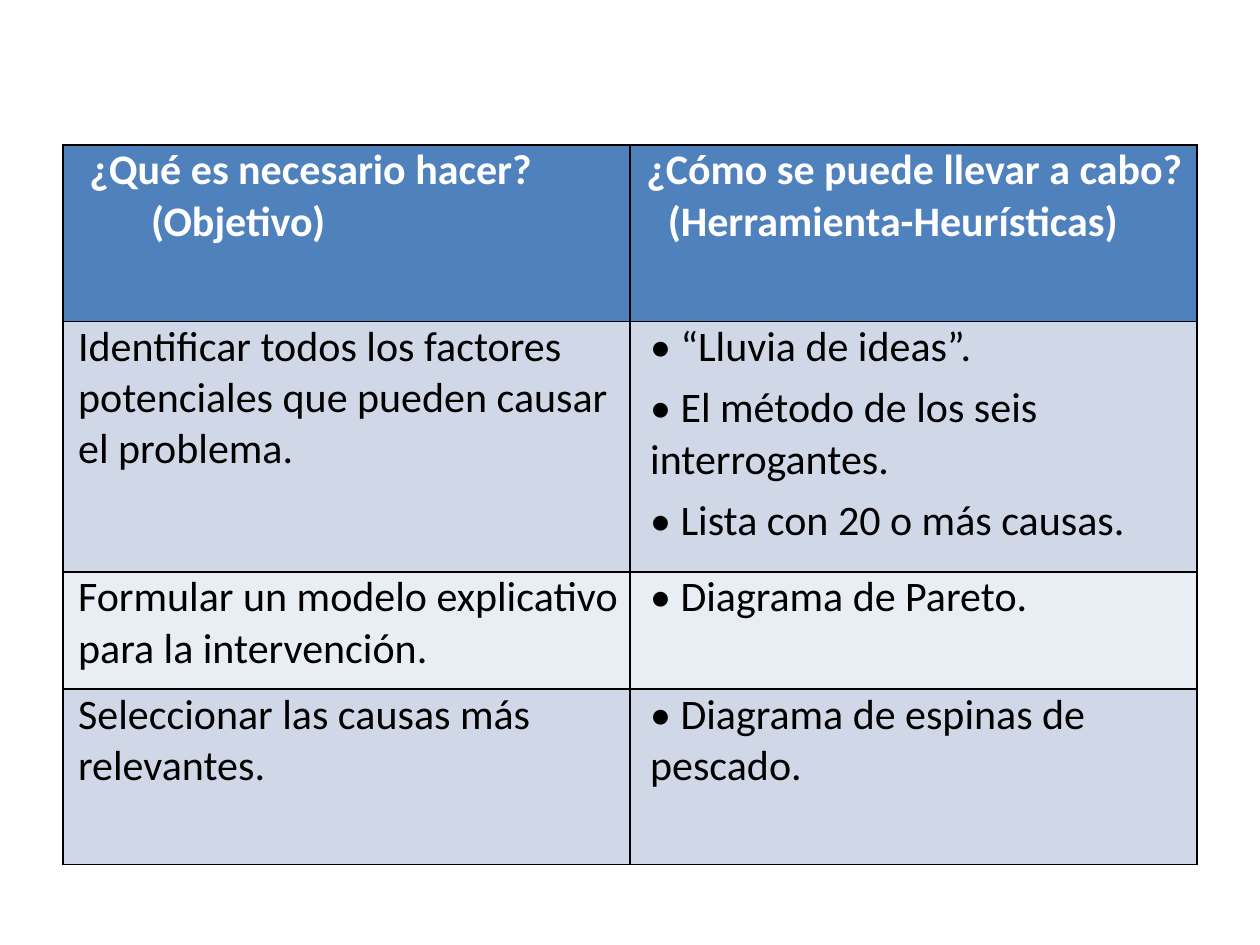
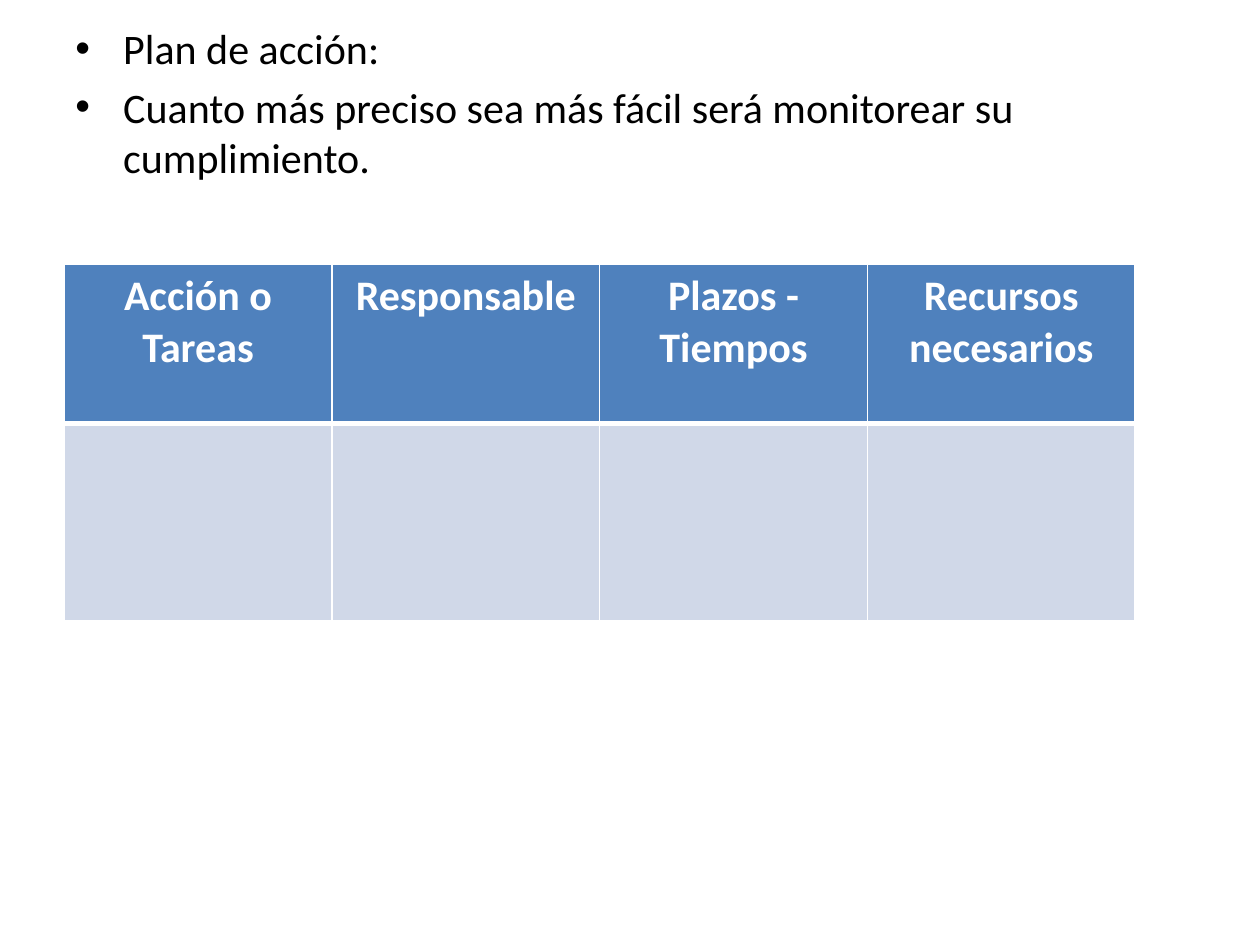
from lxml import etree
from pptx import Presentation
from pptx import oxml
from pptx.dml import color
from pptx.enum import text
from pptx.oxml import ns
from pptx.util import Inches, Pt

FONT = "Calibri"
SIZE = 24
HEAD, DARK, PALE = "4F81BD", "D0D8E8", "E9EDF4"
BLACK, WHITE = "000000", "FFFFFF"


def paint(hue):
    """Turn a hex string into a colour."""
    return color.RGBColor.from_string(hue)


def write(par, words, hue=BLACK, bold=False):
    """Add one run in the shared font."""
    run = par.add_run()
    run.text = words
    font = run.font
    font.name, font.size, font.bold = FONT, Pt(SIZE), bold
    font.color.rgb = paint(hue)


def indent(par, left, first=0):
    """Set the left margin and first-line indent of a paragraph."""
    props = par._p.get_or_add_pPr()
    props.set("marL", str(Inches(left)))
    props.set("indent", str(Inches(first)))
    return props


def border(cell, hue, **widths):
    """Draw the four cell edges, one point wide unless told otherwise."""
    props = cell._tc.get_or_add_tcPr()
    for side in "LRTB":
        line = etree.SubElement(props, ns.qn(f"a:ln{side}"),
                                w=str(Pt(widths.get(side, 1))))
        fill = etree.SubElement(line, ns.qn("a:solidFill"))
        etree.SubElement(fill, ns.qn("a:srgbClr"), val=hue)


def shade(cell, hue):
    """Fill a cell with a plain colour."""
    cell.fill.solid()
    cell.fill.fore_color.rgb = paint(hue)


def grid(slide, left, top, widths, heights):
    """Add an unbanded table with the given columns and rows."""
    table = slide.shapes.add_table(
        len(heights), len(widths), Inches(left), Inches(top),
        Inches(sum(widths)), Inches(sum(heights))).table
    table.first_row = table.horz_banding = False
    for col, width in zip(table.columns, widths):
        col.width = Inches(width)
    for row, height in zip(table.rows, heights):
        row.height = Inches(height)
    return table


def fill_goal(cell, lines, hue, left, first=0, before=3, bold=False):
    """Write the paragraphs of one goal cell, without cell margins."""
    cell.margin_left = cell.margin_right = 0
    cell.margin_top = cell.margin_bottom = 0
    frame = cell.text_frame
    for num, line in enumerate(lines):
        par = frame.add_paragraph() if num else frame.paragraphs[0]
        indent(par, left, first)
        par.space_before, par.space_after = Pt(before), Pt(3)
        write(par, line, hue, bold)


def add_goals(slide, left, top):
    """Place the table of goals and tools."""
    heads = [("¿Qué es necesario hacer? (Objetivo)", 0.7, -0.49),
             ("¿Cómo se puede llevar a cabo? (Herramienta-Heurísticas)",
              0.3, -0.17)]
    goals = [
        ("Identificar todos los factores potenciales que pueden "
         "causar el problema.",
         ["“Lluvia de ideas”.", "El método de los seis interrogantes.",
          "Lista con 20 o más causas."]),
        ("Formular un modelo explicativo para la intervención.",
         ["Diagrama de Pareto."]),
        ("Seleccionar las causas más relevantes.",
         ["Diagrama de espinas de pescado."]),
    ]
    table = grid(slide, left, top, [4.5] * 2, [1.4, 1.99, 0.93, 1.39])
    for cell in table.iter_cells():
        border(cell, BLACK)
    for col, (head, margin, first) in enumerate(heads):
        cell = table.cell(0, col)
        shade(cell, HEAD)
        fill_goal(cell, [head], WHITE, margin, first, 0, True)
    for row, (goal, tools) in enumerate(goals, 1):
        for col in range(2):
            shade(table.cell(row, col), DARK if row % 2 else PALE)
        fill_goal(table.cell(row, 0), [goal], BLACK, 0.12,
                  before=6 if row == 1 else 3)
        fill_goal(table.cell(row, 1), [f"• {tool}" for tool in tools],
                  BLACK, 0.16)


def add_points(slide, left, top, width, height):
    """Place the bulleted introduction."""
    points = ["Plan de acción:",
              "Cuanto más preciso sea más fácil será monitorear su "
              "cumplimiento."]
    frame = slide.shapes.add_textbox(
        Inches(left), Inches(top), Inches(width), Inches(height)).text_frame
    frame.word_wrap = True
    for num, point in enumerate(points):
        par = frame.add_paragraph() if num else frame.paragraphs[0]
        props = indent(par, 0.38, -0.38)
        par.space_before = Pt(SIZE * 0.2)
        etree.SubElement(props, ns.qn("a:buFont"), typeface="Arial")
        etree.SubElement(props, ns.qn("a:buChar"), char="•")
        write(par, point)


def add_plan(slide, left, top):
    """Place the empty action plan under its headings."""
    heads = ["Acción o Tareas", "Responsable", "Plazos - Tiempos",
             "Recursos necesarios"]
    table = grid(slide, left, top, [2.125] * len(heads), [1.26, 1.57])
    for col, head in enumerate(heads):
        cell, blank = table.cell(0, col), table.cell(1, col)
        border(cell, WHITE, B=3)
        border(blank, WHITE, T=3)
        shade(cell, HEAD)
        shade(blank, DARK)
        par = cell.text_frame.paragraphs[0]
        par.alignment = text.PP_ALIGN.CENTER
        write(par, head, WHITE, True)


def main():
    """Build and save both slides."""
    deck = Presentation()
    deck.slide_width, deck.slide_height = Inches(10), Inches(7.5)
    blank = deck.slide_layouts[6]
    add_goals(deck.slides.add_slide(blank), 0.5, 1.15)
    plan = deck.slides.add_slide(blank)
    add_points(plan, 0.5, 0.13, 9, 6.57)
    add_plan(plan, 0.51, 2.1)
    deck.save("out.pptx")


if __name__ == "__main__":
    main()
